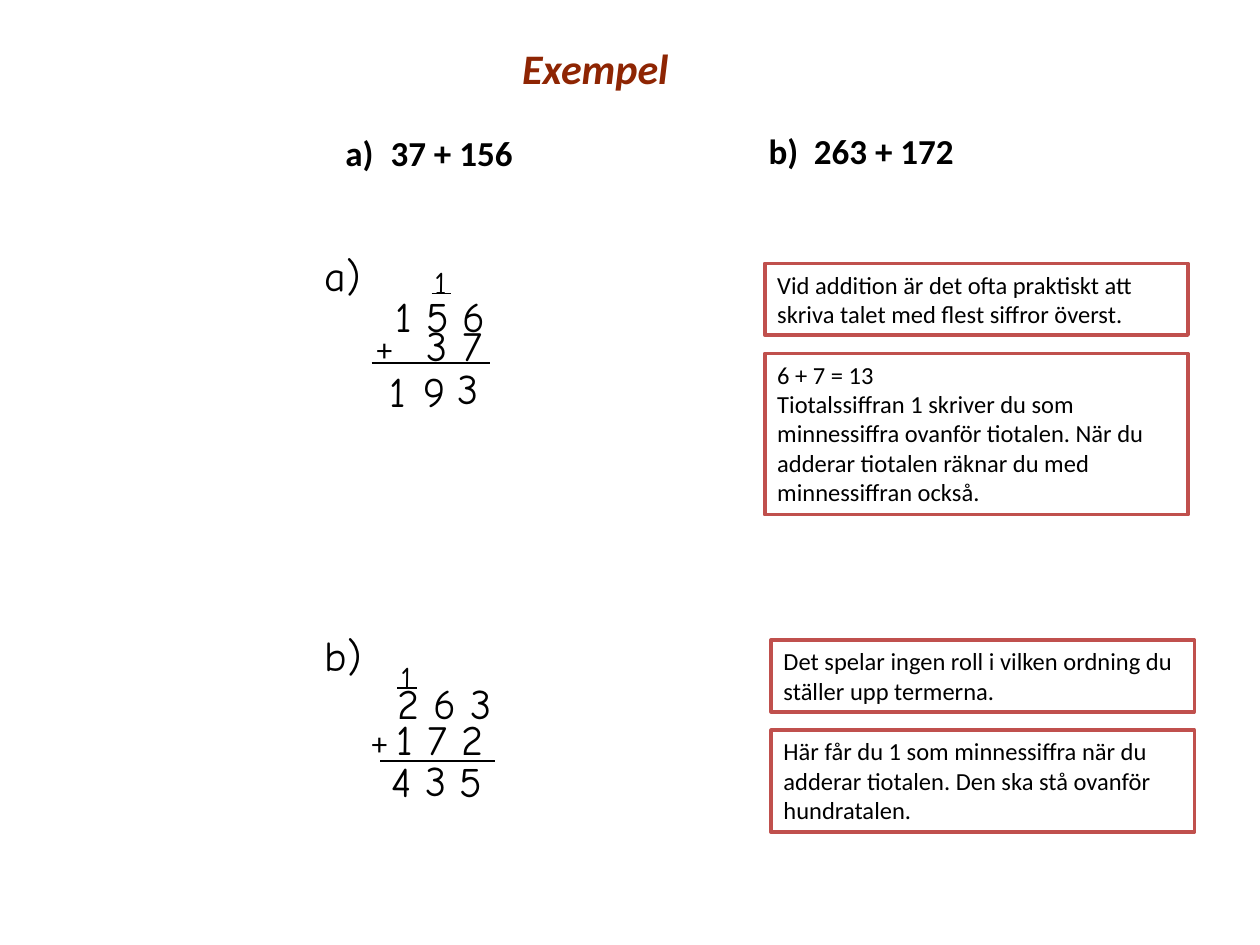
import pptx
import pptx.dml.color
import pptx.enum.shapes
import pptx.enum.text
import pptx.oxml.ns
import pptx.util
import lxml.etree
from dataclasses import dataclass


@dataclass(frozen=True)
class Theme:
    """Colours, fonts and type sizes of the slide."""
    title: str = "8E2503"
    ink: str = "000000"
    paper: str = "FFFFFF"
    frame: str = "C0504D"
    body: str = "Calibri"
    hand: str = "Comic Neue"
    large: int = 24
    task: int = 20
    small: int = 18
    note: int = 14


THEME = Theme()
WIDTH, HEIGHT = 10, 7.5
COLUMNS, ROWS = 100, 75


def rgb(value):
    """Return a colour object for a hex string."""
    return pptx.dml.color.RGBColor.from_string(value)


def grid(*lengths):
    """Turn alternating columns and rows of the grid into slide lengths."""
    steps = (WIDTH / COLUMNS, HEIGHT / ROWS)
    return [pptx.util.Inches(n * steps[i % 2]) for i, n in enumerate(lengths)]


def style(font, name, size, color=THEME.ink, bold=False, italic=False):
    """Format the font of a paragraph or run."""
    font.name, font.size = name, pptx.util.Pt(size)
    font.bold, font.italic = bold, italic
    font.color.rgb = rgb(color)


def set_tab(p, inches):
    """Give a paragraph one left tab stop."""
    qn = pptx.oxml.ns.qn
    tabs = lxml.etree.Element(qn("a:tabLst"))
    lxml.etree.SubElement(tabs, qn("a:tab"), pos=str(pptx.util.Inches(inches)), algn="l")
    p._p.get_or_add_pPr().insert(0, tabs)


def add_title(s, box, text):
    """Place the slide title in its placeholder."""
    sp = s.shapes.title
    sp.left, sp.top, sp.width, sp.height = grid(*box)
    tf = sp.text_frame
    tf.word_wrap = False
    tf.vertical_anchor = pptx.enum.text.MSO_ANCHOR.MIDDLE
    p = tf.paragraphs[0]
    p.text = text
    p.alignment = pptx.enum.text.PP_ALIGN.CENTER
    style(p.font, THEME.body, THEME.large, THEME.title, True, True)


def add_task(s, box, label, task):
    """Place a labelled task in a one-cell table."""
    table = s.shapes.add_table(1, 1, *grid(*box)).table
    table.first_row = table.horz_banding = False
    cell = table.cell(0, 0)
    cell.fill.background()
    cell.margin_left = cell.margin_right = pptx.util.Inches(0.05)
    cell.margin_top = cell.margin_bottom = 0
    p = cell.text_frame.paragraphs[0]
    p.text = f"{label}\t{task}"
    set_tab(p, 0.36)
    style(p.font, THEME.body, THEME.task, bold=True)


def add_hand(s, box, text, size=THEME.large):
    """Write handwritten text and return its paragraph."""
    tf = s.shapes.add_textbox(*grid(*box)).text_frame
    tf.word_wrap = True
    p = tf.paragraphs[0]
    p.text = text
    style(p.font, THEME.hand, size)
    return p


def add_rule(s, x, y, length, weight):
    """Draw a horizontal line."""
    line = s.shapes.add_connector(
        pptx.enum.shapes.MSO_CONNECTOR.STRAIGHT, *grid(x, y, x + length, y))
    line.line.color.rgb = rgb(THEME.ink)
    line.line.width = pptx.util.Pt(weight)
    lxml.etree.SubElement(line._element.spPr, pptx.oxml.ns.qn("a:effectLst"))


def add_sum(s, origin, label, upper, lower, tab, carry, rule, answer):
    """Set out a column addition relative to its top-left corner."""
    x, y = origin
    add_hand(s, (x, y, 5.4, 5), label)
    dx, dy, text = upper
    add_hand(s, (x + dx, y + dy, 11.4, 5), text)

    dx, dy, text = lower
    p = add_hand(s, (x + dx, y + dy, 18.1, 5), "")
    set_tab(p, tab)
    for part, font, size in (("+", THEME.body, THEME.small),
                             ("\t" + text, THEME.hand, THEME.large)):
        r = p.add_run()
        r.text = part
        style(r.font, font, size)

    dx, dy, text = carry
    add_hand(s, (x + dx, y + dy, 2.4, 4), text, THEME.small)
    add_rule(s, x + dx + 0.75, y + dy + 2.9, 1.55, 0.75)

    dx, dy, length = rule
    add_rule(s, x + dx, y + dy, length, 1)
    for dx, dy, digit in answer:
        add_hand(s, (x + dx, y + dy, 2.9, 5), digit)


def add_notes(s, box, notes, gap=1.45):
    """Stack framed notes downwards from the top of a column."""
    x, y, width = box
    for height, *lines in notes:
        sp = s.shapes.add_shape(
            pptx.enum.shapes.MSO_SHAPE.RECTANGLE, *grid(x, y, width, height))
        sp.shadow.inherit = False
        sp.fill.solid()
        sp.fill.fore_color.rgb = rgb(THEME.paper)
        sp.line.color.rgb = rgb(THEME.frame)
        sp.line.width = pptx.util.Pt(2)
        tf = sp.text_frame
        tf.word_wrap = True
        tf.vertical_anchor = pptx.enum.text.MSO_ANCHOR.TOP
        tf.text = "\n".join(lines)
        for p in tf.paragraphs:
            p.alignment = pptx.enum.text.PP_ALIGN.LEFT
            style(p.font, THEME.body, THEME.note)
        y += height + gap


def main():
    """Build and save the slide."""
    prs = pptx.Presentation()
    prs.slide_width, prs.slide_height = pptx.util.Inches(WIDTH), pptx.util.Inches(HEIGHT)
    s = prs.slides.add_slide(prs.slide_layouts[5])

    add_title(s, (40.4, 2.9, 13.7, 5), "Exempel")
    add_task(s, (26.9, 10.6, 15.8, 3.3), "a)", "37 + 156")
    add_task(s, (60.5, 10.4, 21.6, 3.3), "b)", "263 + 172")

    add_sum(s, (24.8, 19.3), "a)", (5.6, 3.3, "1 5 6"), (4.1, 5.6, "3 7"), 0.4,
            (8.7, 1.1, "1"), (4.7, 9.5, 9.4),
            [(5.1, 9.2, "1"), (7.8, 9.2, "9"), (10.5, 9, "3")])
    add_sum(s, (24.8, 49.5), "b)", (5.8, 3.8, "2 6 3"), (3.7, 6.6, "1 7 2"), 0.2,
            (6, 2.2, "1"), (5.4, 10.9, 9.1),
            [(5.3, 10, "4"), (8, 9.9, "3"), (10.7, 10, "5")])

    add_notes(s, (60.7, 20.9, 33.6), [
        (5.7, "Vid addition är det ofta praktiskt att skriva talet med flest siffror överst."),
        (12.8, "6 + 7 = 13",
         "Tiotalssiffran 1 skriver du som minnessiffra ovanför tiotalen. "
         "När du adderar tiotalen räknar du med minnessiffran också.")])
    add_notes(s, (61.2, 50.8, 33.6), [
        (5.7, "Det spelar ingen roll i vilken ordning du ställer upp termerna."),
        (8.1, "Här får du 1 som minnessiffra när du adderar tiotalen. "
              "Den ska stå ovanför hundratalen.")])

    prs.save("out.pptx")


if __name__ == "__main__":
    main()
